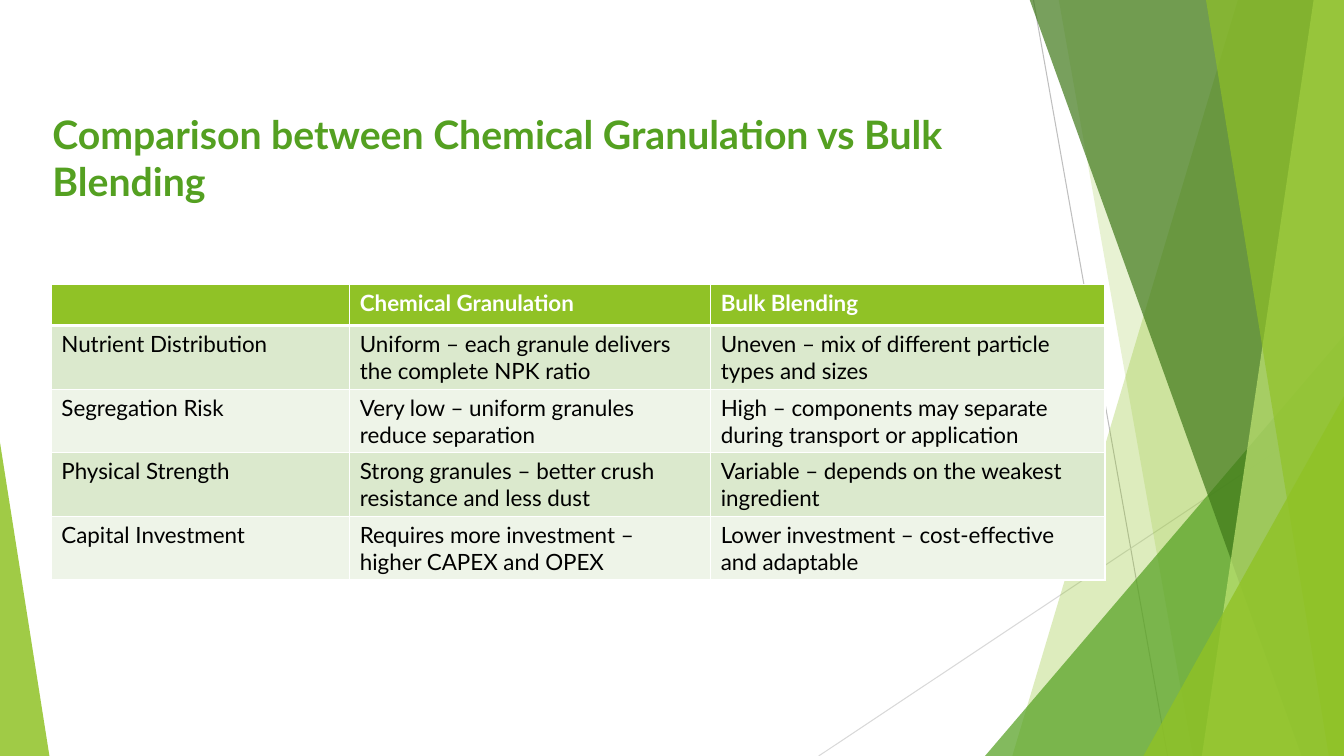
from lxml import etree
from pptx import Presentation
from pptx.dml.color import RGBColor
from pptx.enum.shapes import MSO_CONNECTOR, MSO_SHAPE
from pptx.enum.text import MSO_ANCHOR, PP_ALIGN
from pptx.oxml.ns import qn
from pptx.util import Inches, Pt

STRAIGHT = MSO_CONNECTOR.STRAIGHT
TRIANGLE = MSO_SHAPE.ISOSCELES_TRIANGLE
LEFT, TOP = PP_ALIGN.LEFT, MSO_ANCHOR.TOP

# Content
TITLE = "Comparison between Chemical Granulation vs Bulk Blending"
COMPARISON = [
    ("", "Chemical Granulation", "Bulk Blending"),
    ("Nutrient Distribution", "Uniform – each granule delivers the complete NPK ratio",
     "Uneven – mix of different particle types and sizes"),
    ("Segregation Risk", "Very low – uniform granules reduce separation",
     "High – components may separate during transport or application"),
    ("Physical Strength", "Strong granules – better crush resistance and less dust",
     "Variable – depends on the weakest ingredient"),
    ("Capital Investment", "Requires more investment – higher CAPEX and OPEX",
     "Lower investment – cost-effective and adaptable"),
]

# Layout and colours
WIDTH, HEIGHT = 13.33, 7.5
BAND_TOP = -0.01
COLUMN_WIDTHS = (2.96, 3.58, 3.91)
HEADER_HEIGHT, ROW_HEIGHT = 0.41, 0.63
GREEN, LEAF, WHITE = "90C226", "54A021", "FFFFFF"
ROW_FILLS = ("DBE9CD", "EEF4E8")
TITLE_FONT = {"name": "Lato", "size": Pt(28), "bold": True}
HEADER_FONT = {"name": "Lato", "size": Pt(16), "bold": True}
BODY_FONT = {**HEADER_FONT, "bold": False}

# Background: start, end, colour
RAYS = [((10.25, 0), (11.58, HEIGHT), "BFBFBF"),
        ((WIDTH, 4.03), (8.12, HEIGHT), "D9D9D9")]
# Bands reach the right edge: top-left x, bottom-left x, colour, opacity %
# Triangles stand on the bottom edge: left, top, width, apex, colour, opacity %
DECOR = [
    ("band", 12.28, 10.04, GREEN, 30),
    ("band", 10.5, 11.83, GREEN, 20),
    ("triangle", 9.77, 3.33, 3.56, 1, LEAF, 72),
    ("band", 10.21, 12.91, "3F7819", 70),
    ("band", 13.03, 11.92, "C0E474", 70),
    ("band", 11.96, 13.18, GREEN, 65),
    ("triangle", 11.34, 3.93, 1.99, 1, GREEN, 80),
    ("triangle", 0, 4.39, 0.49, 0, GREEN, 85),
]


def paint(colour_format, colour):
    colour_format.rgb = RGBColor.from_string(colour)


def solid(fill, colour):
    fill.solid()
    paint(fill.fore_color, colour)


def style(font, formats, colour):
    for key, value in formats.items():
        setattr(font, key, value)
    paint(font.color, colour)


def add_ray(shapes, start, end, colour):
    ray = shapes.add_connector(STRAIGHT, *map(Inches, start + end))
    ray.line.width = Pt(0.75)
    paint(ray.line.color, colour)
    etree.SubElement(ray._element.spPr, qn("a:effectLst"))


def add_band(shapes, top_x, bottom_x):
    builder = shapes.build_freeform(Inches(top_x), Inches(BAND_TOP))
    corners = [(WIDTH, BAND_TOP), (WIDTH, HEIGHT), (bottom_x, HEIGHT)]
    builder.add_line_segments([(Inches(x), Inches(y)) for x, y in corners], close=True)
    return builder.convert_to_shape()


def add_triangle(shapes, left, top, width, apex):
    triangle = shapes.add_shape(TRIANGLE, *map(Inches, (left, top, width, HEIGHT - top)))
    triangle.adjustments[0] = apex
    return triangle


def add_decor(shapes, kind, *values):
    *geometry, colour, opacity = values
    draw = add_band if kind == "band" else add_triangle
    decor = draw(shapes, *geometry)
    decor.shadow.inherit = False
    decor.line.fill.background()
    solid(decor.fill, colour)
    tint = decor._element.spPr.find(qn("a:solidFill"))[0]
    etree.SubElement(tint, qn("a:alpha"), val=str(opacity * 1000))


def set_borders(cell, bottom_width):
    properties = cell._tc.get_or_add_tcPr()
    widths = {"lnL": 1, "lnR": 1, "lnT": 1, "lnB": bottom_width}
    for index, (side, width) in enumerate(widths.items()):
        border = etree.Element(qn(f"a:{side}"), w=str(Pt(width)))
        fill = etree.SubElement(border, qn("a:solidFill"))
        etree.SubElement(fill, qn("a:srgbClr"), val=WHITE)
        properties.insert(index, border)


def add_comparison(shapes):
    total_height = HEADER_HEIGHT + ROW_HEIGHT * (len(COMPARISON) - 1)
    table = shapes.add_table(
        len(COMPARISON), len(COLUMN_WIDTHS), Inches(0.51), Inches(2.82),
        Inches(sum(COLUMN_WIDTHS)), Inches(total_height)).table
    for column, width in zip(table.columns, COLUMN_WIDTHS):
        column.width = Inches(width)
    for r, texts in enumerate(COMPARISON):
        header = r == 0
        table.rows[r].height = Inches(HEADER_HEIGHT if header else ROW_HEIGHT)
        for c, text in enumerate(texts):
            cell = table.cell(r, c)
            cell.text = text
            solid(cell.fill, GREEN if header else ROW_FILLS[(r - 1) % 2])
            style(cell.text_frame.paragraphs[0].font,
                  HEADER_FONT if header else BODY_FONT, WHITE if header else "000000")
            # The rule below the header is thicker on both sides of the edge
            set_borders(cell, 3 if header else 1)
            if r == 1:
                cell._tc.tcPr.find(qn("a:lnT")).set("w", str(Pt(3)))


def main():
    prs = Presentation()
    prs.slide_width, prs.slide_height = Inches(WIDTH), Inches(HEIGHT)
    slide = prs.slides.add_slide(prs.slide_layouts[5])
    shapes = slide.shapes
    solid(slide.background.fill, WHITE)

    # Background rays and facets
    for ray in RAYS:
        add_ray(shapes, *ray)
    for decor in DECOR:
        add_decor(shapes, *decor)

    # Title, brought in front of the background
    title = shapes.title
    shapes._spTree.append(title._element)
    title.left, title.top, title.width, title.height = map(Inches, (0.42, 1.04, 10.55, 1.4))
    title.text_frame.text = TITLE
    title.text_frame.word_wrap = True
    title.text_frame.vertical_anchor = TOP
    heading = title.text_frame.paragraphs[0]
    heading.alignment = LEFT
    style(heading.font, TITLE_FONT, LEAF)

    add_comparison(shapes)
    prs.save("out.pptx")


if __name__ == "__main__":
    main()
